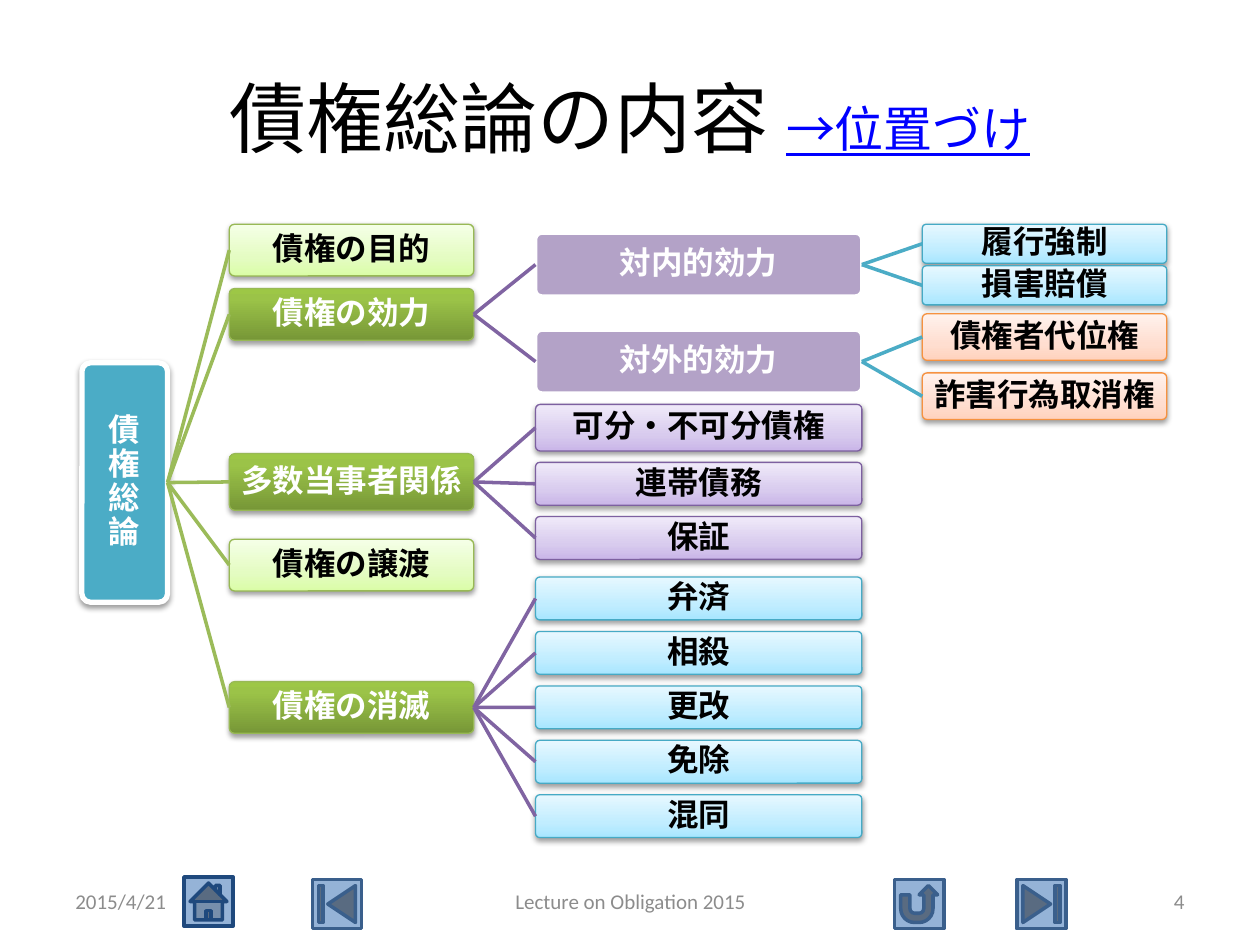
from copy import deepcopy
from dataclasses import dataclass, field

from lxml.etree import SubElement
from pptx import Presentation
from pptx.dml.color import RGBColor
from pptx.enum.shapes import MSO_CONNECTOR, MSO_SHAPE
from pptx.enum.text import MSO_ANCHOR, PP_ALIGN
from pptx.oxml.ns import qn
from pptx.util import Inches, Pt

BLACK = RGBColor(0x00, 0x00, 0x00)
WHITE = RGBColor(0xFF, 0xFF, 0xFF)
GRAY = RGBColor(0x8C, 0x8C, 0x8C)
LINK_BLUE = RGBColor(0x00, 0x00, 0xFF)
BUTTON_BLUE = RGBColor(0x95, 0xB3, 0xD7)
BUTTON_EDGE = RGBColor(0x3A, 0x5F, 0x8C)
NAVY = RGBColor(0x1F, 0x49, 0x7D)
TEAL = RGBColor(0x4B, 0xAC, 0xC6)
TEAL_EDGE = RGBColor(0x46, 0xAA, 0xC5)
GREEN = RGBColor(0x9B, 0xBB, 0x59)
GREEN_EDGE = RGBColor(0x98, 0xB9, 0x55)
PURPLE = RGBColor(0x80, 0x64, 0xA2)
PURPLE_EDGE = RGBColor(0x7D, 0x60, 0xA0)
LAVENDER = RGBColor(0xB3, 0xA2, 0xC7)
ORANGE_EDGE = RGBColor(0xF6, 0x92, 0x40)

# Gradients run from bottom to top as (position, colour) stops.
DEEP_GREEN = ((0, RGBColor(0x77, 0x97, 0x37)), (0.8, RGBColor(0x9B, 0xC3, 0x48)),
              (1, RGBColor(0x9D, 0xC7, 0x46)))
PALE_GREEN = ((0, RGBColor(0xDA, 0xFD, 0xA7)), (0.35, RGBColor(0xE4, 0xFC, 0xC2)),
              (1, RGBColor(0xF5, 0xFF, 0xE7)))
PALE_BLUE = ((0, RGBColor(0xA7, 0xE6, 0xFF)), (0.35, RGBColor(0xC1, 0xED, 0xFF)),
             (1, RGBColor(0xE7, 0xF8, 0xFF)))
PALE_PURPLE = ((0, RGBColor(0xC9, 0xB5, 0xE8)), (0.35, RGBColor(0xD8, 0xCB, 0xEE)),
               (1, RGBColor(0xF0, 0xEA, 0xF9)))
PALE_ORANGE = ((0, RGBColor(0xFF, 0xD2, 0xBD)), (0.35, RGBColor(0xFF, 0xDE, 0xD0)),
               (1, RGBColor(0xFF, 0xF2, 0xED)))

COLUMNS, ROWS = 100, 75
LEVELS = ((6.5, 6.8), (18.2, 19.4), (42.5, 25.9), (73.2, 19.4))  # left, width
BRANCH_COLORS = (GREEN, PURPLE, TEAL)  # by level of the parent


@dataclass
class BoxStyle:
    fill: object
    edge: RGBColor
    edge_width: float = 0.75
    text: RGBColor = BLACK
    shadow: bool = True


ROOT = BoxStyle(TEAL, WHITE, 3, WHITE)
PARENT = BoxStyle(DEEP_GREEN, GREEN_EDGE, text=WHITE)
SINGLE = BoxStyle(PALE_GREEN, GREEN_EDGE)
EFFECT = BoxStyle(LAVENDER, WHITE, 2, WHITE, shadow=False)
BLUE_LEAF = BoxStyle(PALE_BLUE, TEAL_EDGE)
PURPLE_LEAF = BoxStyle(PALE_PURPLE, PURPLE_EDGE)
ORANGE_LEAF = BoxStyle(PALE_ORANGE, ORANGE_EDGE)


@dataclass
class Topic:
    label: str
    row: float
    height: float
    style: BoxStyle
    children: list = field(default_factory=list)


class TreeSlide:
    """Holds the slide and its font; places elements on a grid of columns and rows."""

    font = "Calibri"

    def __init__(self, presentation):
        self.cell_width = presentation.slide_width / COLUMNS
        self.cell_height = presentation.slide_height / ROWS
        self.shapes = presentation.slides.add_slide(presentation.slide_layouts[6]).shapes

    def place(self, column, row, width, height):
        return (round(column * self.cell_width), round(row * self.cell_height),
                round(width * self.cell_width), round(height * self.cell_height))

    def format_run(self, run, size, color, bold=False):
        run.font.name = self.font
        run.font.size = Pt(size)
        run.font.bold = bold
        run.font.color.rgb = color

    def text(self, area, parts, align):
        """Adds one line of text made of (text, size, colour) parts."""
        frame = self.shapes.add_textbox(*self.place(*area)).text_frame
        frame.word_wrap = True
        frame.vertical_anchor = MSO_ANCHOR.MIDDLE
        paragraph = frame.paragraphs[0]
        paragraph.alignment = align
        for content, size, color in parts:
            run = paragraph.add_run()
            run.text = content
            self.format_run(run, size, color)
            run.font.underline = color == LINK_BLUE

    def button(self, kind, column, row, edge):
        shape = self.shapes.add_shape(kind, *self.place(column, row, 3.9, 3.9))
        shape.shadow.inherit = False
        shape.fill.solid()
        shape.fill.fore_color.rgb = BUTTON_BLUE
        shape.line.color.rgb = edge
        shape.line.width = Pt(2)

    def gradient(self, shape, stops):
        shape.fill.gradient()
        shape.fill.gradient_angle = 90
        stop_list = shape._element.spPr.find(qn("a:gradFill")).find(qn("a:gsLst"))
        stop_list.append(deepcopy(stop_list[0]))
        for stop, (position, color) in zip(shape.fill.gradient_stops, stops):
            stop.position = position
            stop.color.rgb = color

    def drop_shadow(self, shape):
        effects = shape._element.spPr.find(qn("a:effectLst"))
        shadow = SubElement(effects, qn("a:outerShdw"), blurRad="40000", dist="20000",
                            dir="5400000", rotWithShape="0")
        color = SubElement(shadow, qn("a:srgbClr"), val="000000")
        SubElement(color, qn("a:alpha"), val="38000")

    def box(self, topic, level):
        left, width = LEVELS[level]
        style = topic.style
        shape = self.shapes.add_shape(MSO_SHAPE.ROUNDED_RECTANGLE,
                                      *self.place(left, topic.row, width, topic.height))
        shape.adjustments[0] = 0.1
        shape.shadow.inherit = False
        if style.shadow:
            self.drop_shadow(shape)
        if isinstance(style.fill, RGBColor):
            shape.fill.solid()
            shape.fill.fore_color.rgb = style.fill
        else:
            self.gradient(shape, style.fill)
        shape.line.color.rgb = style.edge
        shape.line.width = Pt(style.edge_width)
        frame = shape.text_frame
        frame.word_wrap = True
        frame.vertical_anchor = MSO_ANCHOR.MIDDLE
        frame.margin_left = frame.margin_right = Inches(0.01)
        frame.margin_top = frame.margin_bottom = Inches(0.01)
        paragraph = frame.paragraphs[0]
        paragraph.text = topic.label
        paragraph.alignment = PP_ALIGN.CENTER
        paragraph.line_spacing = 0.9
        for run in paragraph.runs:
            self.format_run(run, 18, style.text, bold=True)
        return shape

    def branch(self, parent, child, color):
        connector = self.shapes.add_connector(MSO_CONNECTOR.STRAIGHT, 0, 0, 0, 0)
        connector.begin_connect(parent, 3)
        connector.end_connect(child, 1)
        connector.line.color.rgb = color
        connector.line.width = Pt(2)
        SubElement(connector._element.spPr, qn("a:effectLst"))

    def tree(self, topic, level=0):
        """Draws a topic with everything below it and returns its box."""
        shape = self.box(topic, level)
        for child in topic.children:
            self.branch(shape, self.tree(child, level + 1), BRANCH_COLORS[level])
        return shape


def main():
    presentation = Presentation()
    presentation.slide_width, presentation.slide_height = Inches(10), Inches(7.5)
    slide = TreeSlide(presentation)

    for kind, column, row, edge in (
            (MSO_SHAPE.ACTION_BUTTON_BEGINNING, 24.8, 69.8, BUTTON_EDGE),
            (MSO_SHAPE.ACTION_BUTTON_END, 80.7, 69.8, BUTTON_EDGE),
            (MSO_SHAPE.ACTION_BUTTON_RETURN, 71, 69.8, BUTTON_EDGE),
            (MSO_SHAPE.ACTION_BUTTON_HOME, 14.6, 69.6, NAVY)):
        slide.button(kind, column, row, edge)

    slide.text((5, 3, 90, 12.5), [("債権総論の内容 ", 44, BLACK), ("→位置づけ", 28, LINK_BLUE)],
               PP_ALIGN.CENTER)
    for content, column, width, align in (
            ("2015/4/21", 5, 23.3, PP_ALIGN.LEFT),
            ("Lecture on Obligation 2015", 34.2, 31.7, PP_ALIGN.CENTER),
            ("4", 71.7, 23.3, PP_ALIGN.RIGHT)):
        slide.text((column, 69.5, width, 4), [(content, 12, GRAY)], align)

    internal = Topic("対内的効力", 18.5, 5, EFFECT, [
        Topic("履行強制", 17.8, 3.1, BLUE_LEAF),
        Topic("損害賠償", 21.1, 3.1, BLUE_LEAF)])
    external = Topic("対外的効力", 26.2, 5, EFFECT, [
        Topic("債権者代位権", 24.9, 3.7, ORANGE_LEAF),
        Topic("詐害行為取消権", 29.6, 3.7, ORANGE_LEAF)])
    parties = [Topic("可分・不可分債権", 32.1, 3.7, PURPLE_LEAF),
               Topic("連帯債務", 36.7, 3.4, PURPLE_LEAF),
               Topic("保証", 41, 3.4, PURPLE_LEAF)]
    endings = [Topic(label, 45.8 + 4.32 * index, 3.4, BLUE_LEAF)
               for index, label in enumerate(("弁済", "相殺", "更改", "免除", "混同"))]
    slide.tree(Topic("債\n権\n総\n論", 28.8, 19, ROOT, [
        Topic("債権の目的", 17.8, 4.1, SINGLE),
        Topic("債権の効力", 22.9, 4.1, PARENT, [internal, external]),
        Topic("多数当事者関係", 36, 4.5, PARENT, parties),
        Topic("債権の譲渡", 42.8, 4.1, SINGLE),
        Topic("債権の消滅", 54.1, 4.1, PARENT, endings)]))
    presentation.save("out.pptx")


if __name__ == "__main__":
    main()
